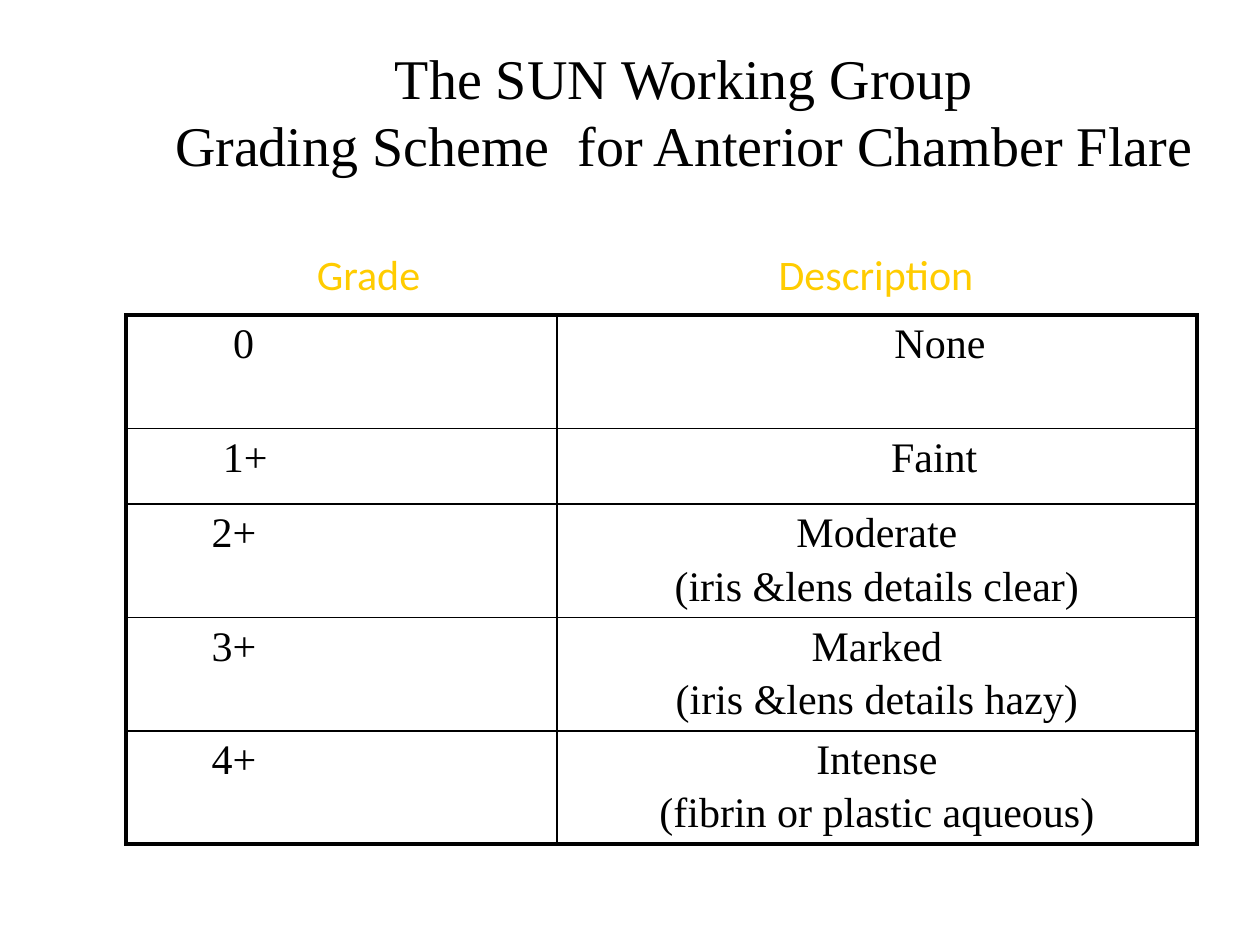
from lxml import etree
from pptx import Presentation
from pptx.dml.color import RGBColor
from pptx.enum.text import MSO_ANCHOR, MSO_AUTO_SIZE, PP_ALIGN
from pptx.oxml.ns import qn
from pptx.util import Inches, Pt

LEFT, CENTER = PP_ALIGN.LEFT, PP_ALIGN.CENTER
MIDDLE = MSO_ANCHOR.MIDDLE
NO_FIT, GROW = MSO_AUTO_SIZE.NONE, MSO_AUTO_SIZE.SHAPE_TO_FIT_TEXT
COLORS = {"text": "000000", "heading": "FFCC00", "border": "000000"}
SERIF, SANS = "Times New Roman", "Calibri"
THIN, THICK = Pt(1), Pt(2.25)

# grade, its indent, description lines, their indent (inches)
GRADES = [
    ("0", 0.75, ["None"], 1),
    ("1+", 0.67, ["Faint"], 0.91),
    ("2+", 0.58, ["Moderate", "(iris &lens details clear)"], 0),
    ("3+", 0.58, ["Marked", "(iris &lens details hazy)"], 0),
    ("4+", 0.58, ["Intense", "(fibrin or plastic aqueous)"], 0),
]
COL_WIDTHS = [3.42, 5.08]
ROW_HEIGHTS = [0.9, 0.6, 0.9, 0.9, 0.9]


def set_attrs(obj, values):
    for name, value in values.items():
        setattr(obj, name, value)


def write(tf, lines, size, font, color, align, space=0):
    tf.text = "\n".join(lines)
    for p in tf.paragraphs:
        set_attrs(p, {"alignment": align, "space_before": Pt(space)})
        for r in p.runs:
            set_attrs(r.font, {"size": Pt(size), "name": font, "bold": False})
            r.font.color.rgb = RGBColor.from_string(COLORS[color])


def add_title(slide, x, y, w, h):
    sp = slide.shapes.title
    set_attrs(sp, {"left": Inches(x), "top": Inches(y),
                   "width": Inches(w), "height": Inches(h)})
    tf = sp.text_frame
    set_attrs(tf, {"word_wrap": True, "auto_size": NO_FIT,
                   "vertical_anchor": MIDDLE, "margin_right": Inches(0.28)})
    lines = ["The SUN Working Group\vGrading Scheme  for Anterior Chamber Flare"]
    write(tf, lines, 32, SERIF, "text", CENTER)


def add_heading(slide, text, x, y, w, h, align, inset=0.1):
    sp = slide.shapes.add_textbox(Inches(x), Inches(y), Inches(w), Inches(h))
    tf = sp.text_frame
    set_attrs(tf, {"word_wrap": True, "auto_size": GROW,
                   "margin_left": Inches(inset)})
    write(tf, [text], 24, SANS, "heading", align)


def set_borders(cell, widths):
    tc_pr = cell._tc.get_or_add_tcPr()
    for side, width in widths.items():
        ln = etree.SubElement(tc_pr, qn(f"a:ln{side}"), w=str(width))
        fill = etree.SubElement(ln, qn("a:solidFill"))
        etree.SubElement(fill, qn("a:srgbClr"), val=COLORS["border"])


def add_grades(slide, x, y, w, h):
    rows, cols = len(GRADES), len(COL_WIDTHS)
    table = slide.shapes.add_table(rows, cols, Inches(x), Inches(y),
                                   Inches(w), Inches(h)).table
    set_attrs(table, {"first_row": False, "horz_banding": False})
    for col, width in zip(table.columns, COL_WIDTHS):
        col.width = Inches(width)
    for row, height in zip(table.rows, ROW_HEIGHTS):
        row.height = Inches(height)

    for i, (grade, grade_indent, lines, indent) in enumerate(GRADES):
        contents = [([grade], grade_indent, LEFT), (lines, indent, CENTER)]
        for j, (text, inset, align) in enumerate(contents):
            cell = table.cell(i, j)
            cell.margin_left = Inches(0.1 + inset)
            write(cell.text_frame, text, 24, SERIF, "text", align, space=4)
            # thick frame outside, thin rules inside
            set_borders(cell, {
                "L": THICK if j == 0 else THIN,
                "R": THICK if j == cols - 1 else THIN,
                "T": THICK if i == 0 else THIN,
                "B": THICK if i == rows - 1 else THIN,
            })
            cell.fill.background()


def main():
    prs = Presentation()
    prs.slide_width, prs.slide_height = Inches(10), Inches(7.5)
    slide = prs.slides.add_slide(prs.slide_layouts[5])

    add_title(slide, 1.26, 0.25, 8.52, 1.25)
    add_grades(slide, 1, 2.5, sum(COL_WIDTHS), sum(ROW_HEIGHTS))
    # column headings above the table
    add_heading(slide, "Grade", 1.75, 1.92, 2.35, 0.5, CENTER)
    add_heading(slide, "Description", 6, 1.92, 2.68, 0.5, LEFT, inset=0.18)
    prs.save("out.pptx")


if __name__ == "__main__":
    main()
